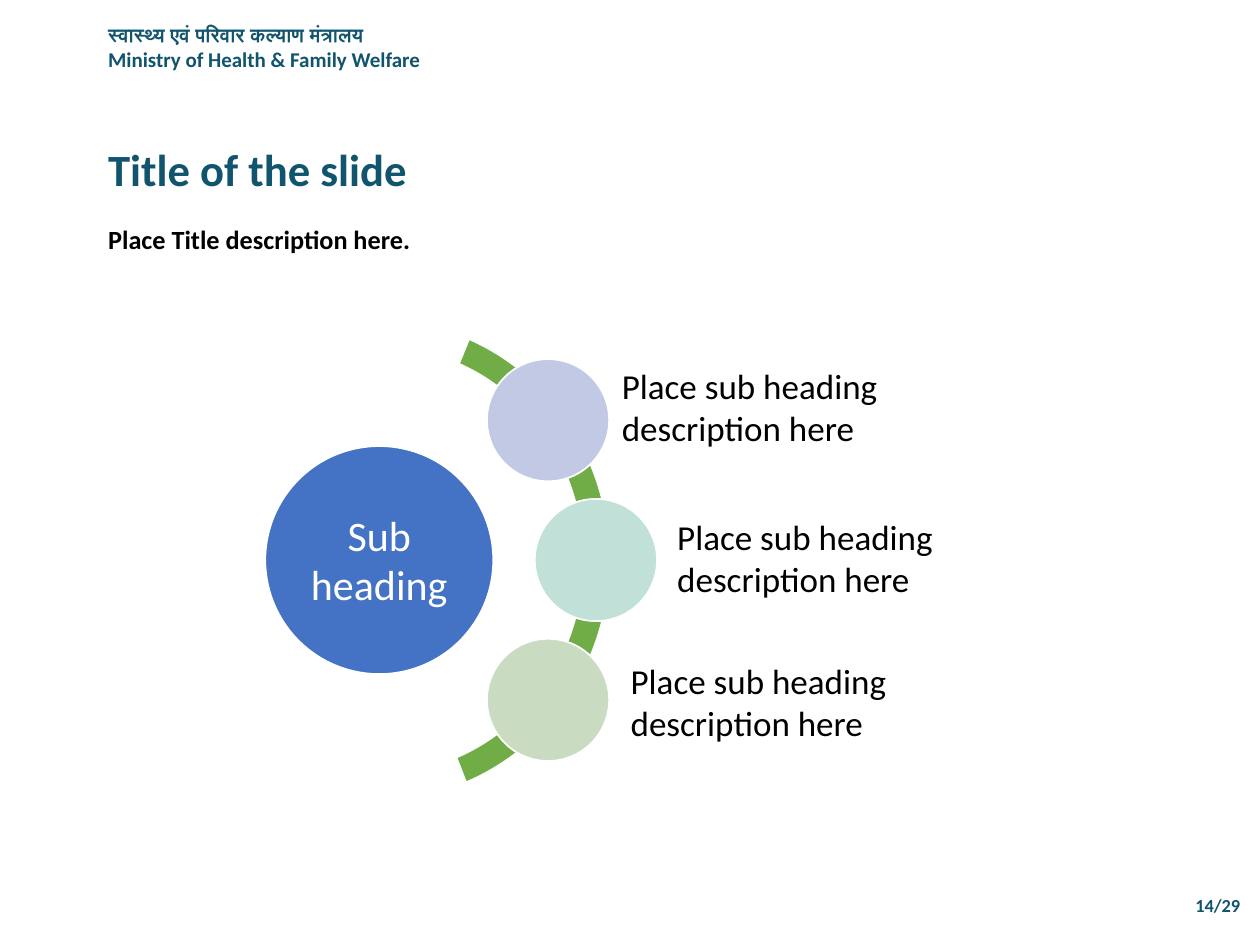
from pptx import Presentation
from pptx.dml.color import RGBColor
from pptx.enum.shapes import MSO_SHAPE as Shape
from pptx.enum.text import MSO_ANCHOR as Anchor, PP_ALIGN as Align
from pptx.util import Inches, Pt

TEAL = RGBColor(0x10, 0x54, 0x6D)
BLACK = RGBColor(0x00, 0x00, 0x00)
WHITE = RGBColor(0xFF, 0xFF, 0xFF)
BLUE = RGBColor(0x44, 0x72, 0xC4)
GREEN = RGBColor(0x70, 0xAD, 0x47)
LILAC = RGBColor(0xC1, 0xC9, 0xE4)
MINT = RGBColor(0xC1, 0xE0, 0xD7)
SAGE = RGBColor(0xC9, 0xDB, 0xC1)

FONT = "Calibri"
WIDTH, HEIGHT = 10, 7.5
MARGIN = 0.76
INSET = 0.03


def add_text(page, area, lines, color, bold=False, align=Align.LEFT,
             spacing=None, centred=False):
    """Add a text box; lines holds one (text, point size) pair per paragraph."""
    box = page.shapes.add_textbox(*map(Inches, area))
    frame = box.text_frame
    frame.word_wrap = True
    if centred:
        frame.vertical_anchor = Anchor.MIDDLE
        frame.margin_left = frame.margin_right = Inches(INSET)
        frame.margin_top = frame.margin_bottom = Inches(INSET)
    for index, (text, size) in enumerate(lines):
        para = frame.add_paragraph() if index else frame.paragraphs[0]
        para.alignment = align
        if spacing:
            para.line_spacing = spacing
        span = para.add_run()
        span.text = text
        span.font.name = FONT
        span.font.size = Pt(size)
        span.font.bold = bold
        span.font.color.rgb = color


def add_figure(page, kind, area, color):
    figure = page.shapes.add_shape(kind, *map(Inches, area))
    figure.shadow.inherit = False
    figure.fill.solid()
    figure.fill.fore_color.rgb = color
    figure.line.color.rgb = WHITE
    figure.line.width = Pt(1)
    return figure


def add_circle(page, center_x, center_y, diameter, color):
    radius = diameter / 2
    area = (center_x - radius, center_y - radius, diameter, diameter)
    add_figure(page, Shape.OVAL, area, color)


def add_frame(page):
    """Add the ministry header and the page number."""
    add_text(page, (WIDTH - 0.67, HEIGHT - 0.45, 0.67, 0.28), [("14/29", 10.5)],
             TEAL, bold=True, align=Align.CENTER)
    add_text(page, (MARGIN, 0.13, 3.43, 0.49),
             [("स्वास्थ्य एवं परिवार कल्याण मंत्रालय", 11.2),
              ("Ministry of Health & Family Welfare", 12)], TEAL, bold=True)


def add_heading(page, left, top):
    add_text(page, (left, top, 4.6, 0.47), [("Title of the slide", 25.5)],
             TEAL, bold=True, spacing=0.8)
    add_text(page, (left, top + 0.64, 5.39, 0.37),
             [("Place Title description here.", 15)],
             BLACK, bold=True, spacing=Pt(12.4))


def add_radial_diagram(page, left, top, width, height):
    """Add a hub, an arc round it and three labelled circles on the arc."""
    center_x, center_y = left + width / 2, top + height / 2
    hub_size, dot_size, label_width, label_height = 1.81, 0.97, 3.11, 0.42
    hub_text = hub_size / 2 ** 0.5

    add_circle(page, center_x, center_y, hub_size, BLUE)
    add_text(page, (center_x - hub_text / 2, center_y - hub_text / 2,
                    hub_text, hub_text), [("Sub heading", 24)], WHITE,
             align=Align.CENTER, spacing=Pt(28), centred=True)

    arc = add_figure(page, Shape.BLOCK_ARC, (left, top, width, height), GREEN)
    for index, value in enumerate((175.278, 41.191, 0.058)):
        arc.adjustments[index] = value

    # Circle offset from the hub, then label gap and rise from the circle
    satellites = [
        (LILAC, 1.34, -1.11, 0.07, -0.11),
        (MINT, 1.72, 0, 0.13, -0.02),
        (SAGE, 1.34, 1.11, 0.14, 0.01),
    ]
    for color, offset_x, offset_y, gap, rise in satellites:
        dot_x, dot_y = center_x + offset_x, center_y + offset_y
        add_circle(page, dot_x, dot_y, dot_size, color)
        add_text(page, (dot_x + dot_size / 2 + gap,
                        dot_y + rise - label_height / 2,
                        label_width, label_height),
                 [("Place sub heading description here", 20)], BLACK,
                 spacing=Pt(24), centred=True)


def main():
    deck = Presentation()
    deck.slide_width, deck.slide_height = Inches(WIDTH), Inches(HEIGHT)
    page = deck.slides.add_slide(deck.slide_layouts[6])
    add_frame(page)
    add_heading(page, MARGIN, 1.16)
    add_radial_diagram(page, 1.18, 2.54, 3.66, 3.81)
    deck.save("out.pptx")


if __name__ == "__main__":
    main()
